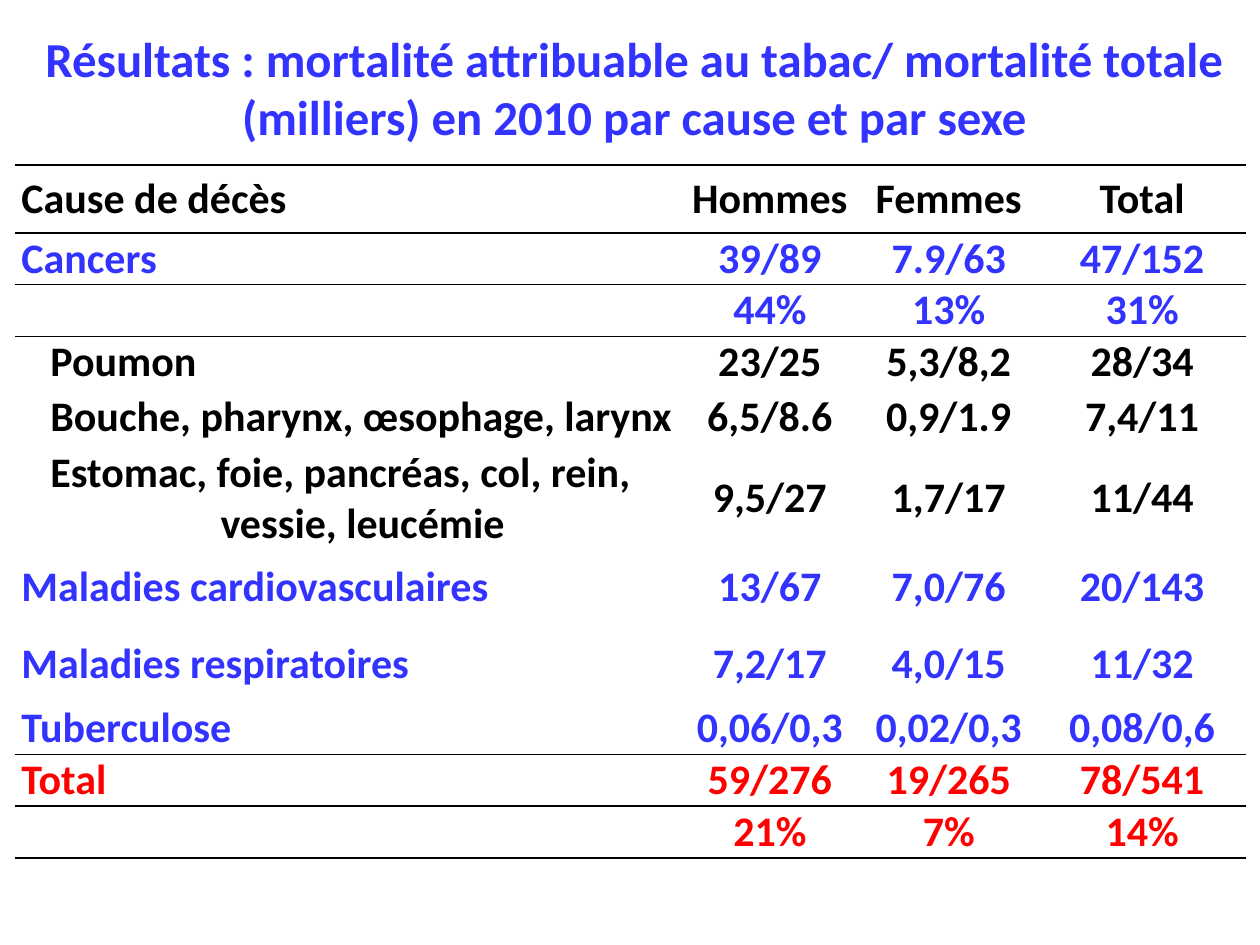
import pptx
import pptx.util
import pptx.dml.color
import pptx.enum.text
import pptx.oxml
import pptx.oxml.ns

SLIDE_WIDTH, SLIDE_HEIGHT = 10, 7.5
FONT = "Calibri"
COLORS = {"blue": "3333FF", "black": "000000", "red": "FF0000"}
NO_STYLE = "{2D5ABB26-0587-4C30-8999-92F81FD0307C}"

HEADING = (
    "Résultats : mortalité attribuable au tabac/ mortalité totale\v"
    "(milliers) en 2010 par cause et par sexe"
)
COLUMN_WIDTHS = [5.28, 1.42, 1.42, 1.65]
CAUSE_INDENT, CONTINUED_INDENT = 0.23, 1.58

# (row height, colour, is a sub-cause, texts)
MORTALITY = [
    (0.54, "black", False, ["Cause de décès", "Hommes", "Femmes", "Total"]),
    (0.41, "blue", False, ["Cancers", "39/89", "7.9/63", "47/152"]),
    (0.41, "blue", False, ["", "44%", "13%", "31%"]),
    (0.41, "black", True, ["Poumon", "23/25", "5,3/8,2", "28/34"]),
    (0.47, "black", True, ["Bouche, pharynx, œsophage, larynx", "6,5/8.6", "0,9/1.9", "7,4/11"]),
    (0.81, "black", True, ["Estomac, foie, pancréas, col, rein,\vvessie, leucémie",
                           "9,5/27", "1,7/17", "11/44"]),
    (0.61, "blue", False, ["Maladies cardiovasculaires", "13/67", "7,0/76", "20/143"]),
    (0.61, "blue", False, ["Maladies respiratoires", "7,2/17", "4,0/15", "11/32"]),
    (0.41, "blue", False, ["Tuberculose", "0,06/0,3", "0,02/0,3", "0,08/0,6"]),
    (0.41, "red", False, ["Total", "59/276", "19/265", "78/541"]),
    (0.41, "red", False, ["", "21%", "7%", "14%"]),
]
RULES = {0, 1, 2, 9, 10, 11}


def inches(value):
    return pptx.util.Inches(value)


def format_runs(paragraph, size, color):
    for run in paragraph.runs:
        run.font.name = FONT
        run.font.size = pptx.util.Pt(size)
        run.font.bold = True
        run.font.color.rgb = pptx.dml.color.RGBColor.from_string(COLORS[color])


def indent(paragraph, first, rest):
    properties = paragraph._p.get_or_add_pPr()
    properties.set("marL", str(inches(rest)))
    properties.set("indent", str(inches(first) - inches(rest)))


def draw_rules(cell, row):
    properties = cell._tc.get_or_add_tcPr()
    edges = [tag for tag, rule in (("lnT", row), ("lnB", row + 1)) if rule in RULES]
    for position, tag in enumerate(edges):
        properties.insert(position, pptx.oxml.parse_xml(
            f'<a:{tag} {pptx.oxml.ns.nsdecls("a")} w="{pptx.util.Pt(1)}"><a:solidFill>'
            f'<a:srgbClr val="{COLORS["black"]}"/></a:solidFill></a:{tag}>'))


def add_heading(slide):
    heading = slide.shapes.add_textbox(
        inches(0.22), inches(0.21), inches(9.63), inches(0.96)).text_frame
    heading.word_wrap = True
    heading.vertical_anchor = pptx.enum.text.MSO_ANCHOR.MIDDLE
    heading.margin_left = heading.margin_right = 0
    heading.text = HEADING
    heading.paragraphs[0].alignment = pptx.enum.text.PP_ALIGN.CENTER
    format_runs(heading.paragraphs[0], 27.9, "blue")


def add_mortality(slide):
    heights = [line[0] for line in MORTALITY]
    frame = slide.shapes.add_table(
        len(MORTALITY), len(COLUMN_WIDTHS), inches(0.12), inches(1.31),
        inches(sum(COLUMN_WIDTHS)), inches(sum(heights)))
    mortality = frame.table
    mortality.first_row = mortality.horz_banding = False
    mortality._tbl.tblPr.find(pptx.oxml.ns.qn("a:tableStyleId")).text = NO_STYLE
    for column, width in zip(mortality.columns, COLUMN_WIDTHS):
        column.width = inches(width)
    for row, (height, color, is_sub_cause, texts) in enumerate(MORTALITY):
        mortality.rows[row].height = inches(height)
        for column, text in enumerate(texts):
            cell = mortality.cell(row, column)
            cell.fill.background()
            cell.margin_left = cell.margin_right = inches(0.05)
            cell.margin_top = cell.margin_bottom = 0
            cell.vertical_anchor = pptx.enum.text.MSO_ANCHOR.MIDDLE
            cell.text_frame.text = text
            paragraph = cell.text_frame.paragraphs[0]
            if column:
                paragraph.alignment = pptx.enum.text.PP_ALIGN.CENTER
            elif is_sub_cause:
                indent(paragraph, CAUSE_INDENT,
                       CONTINUED_INDENT if "\v" in text else CAUSE_INDENT)
            format_runs(paragraph, 24, color)
            draw_rules(cell, row)


def main():
    deck = pptx.Presentation()
    deck.slide_width, deck.slide_height = inches(SLIDE_WIDTH), inches(SLIDE_HEIGHT)
    slide = deck.slides.add_slide(deck.slide_layouts[6])
    add_heading(slide)
    add_mortality(slide)
    deck.save("out.pptx")


if __name__ == "__main__":
    main()
